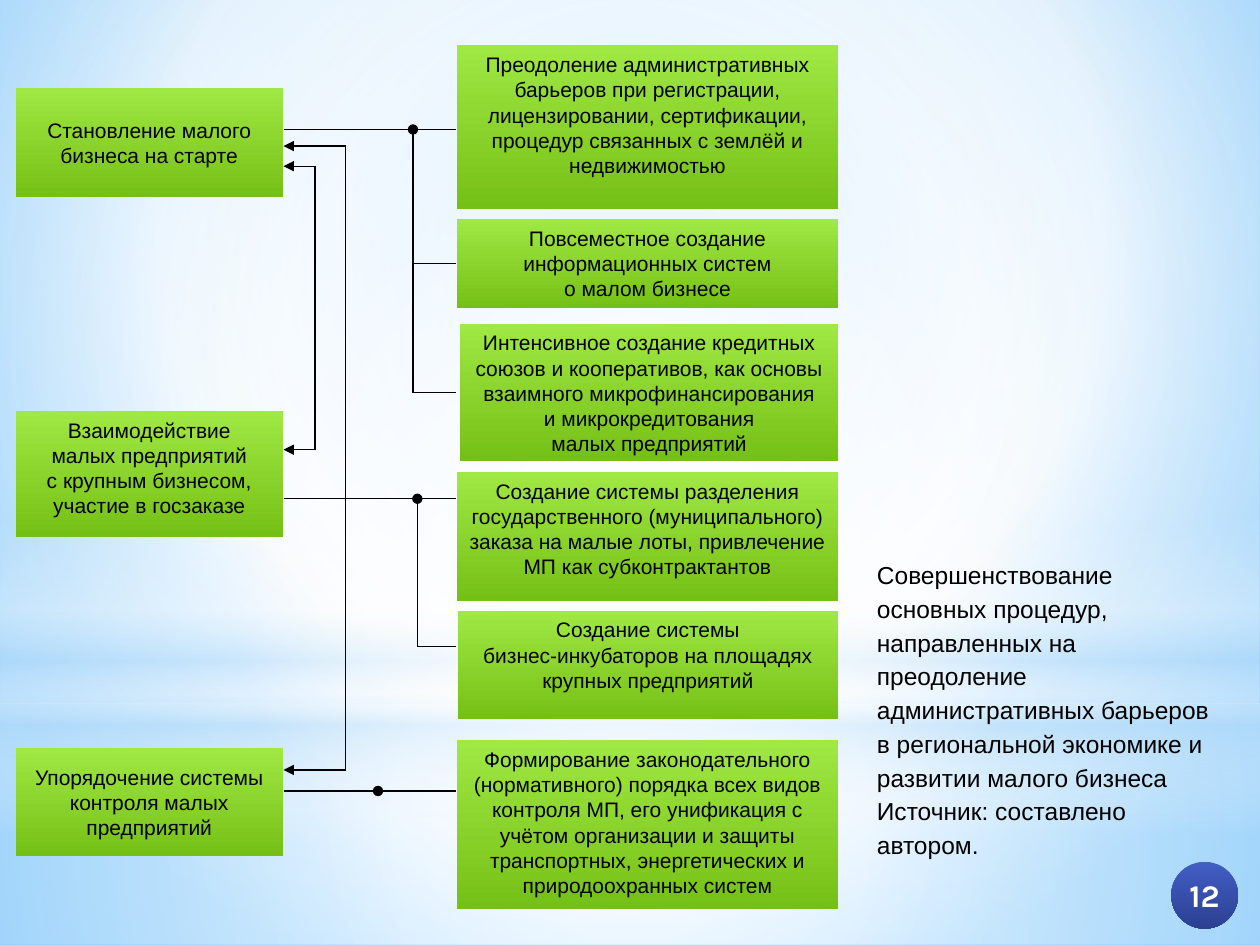
from pptx import Presentation
from pptx.dml.color import RGBColor
from pptx.enum import shapes, text
from pptx.oxml.ns import qn
from pptx.util import Pt
from lxml import etree

GREEN = [(0, "A0E844", 100), (100, "75C016", 100)]
BLUE = [(0, "435EC5", 100), (100, "2B4092", 100)]
MID = (50, 50, 50, 50)
SHAPE = shapes.MSO_SHAPE
TOP, CENTER = text.MSO_ANCHOR.TOP, text.MSO_ANCHOR.MIDDLE


def tint(code):
    """Return the colour of a hex string."""
    return RGBColor.from_string(code)


def node(root, name, **attrs):
    """Add a drawing element with the given attributes."""
    return etree.SubElement(root, qn("a:" + name), {k: str(v) for k, v in attrs.items()})


def blend(owner, fill, stops, focus=None):
    """Give a fill a gradient, downward or round a focus."""
    fill.gradient()
    grad = owner.xpath(".//a:gradFill")[0]
    grad.clear()
    grad.set("rotWithShape", "1")
    row = node(grad, "gsLst")
    for pos, code, alpha in stops:
        color = node(node(row, "gs", pos=pos * 1000), "srgbClr", val=code)
        if alpha < 100:
            node(color, "alpha", val=alpha * 1000)
    if focus:
        sides = {k: v * 1000 for k, v in zip("ltrb", focus)}
        node(node(grad, "path", path="circle"), "fillToRect", **sides)
    else:
        node(grad, "lin", ang=5400000, scaled=0)


def panel(slide, kind, box, stops, focus=None):
    """Draw a borderless gradient shape."""
    form = slide.shapes.add_shape(kind, *map(Pt, box))
    form.shadow.inherit = False
    form.line.fill.background()
    blend(form.element, form.fill, stops, focus)
    return form


def write(frame, lines, size, name="Arial", code="000000", align=text.PP_ALIGN.CENTER):
    """Fill a frame with one paragraph for each line."""
    frame.word_wrap = True
    frame.text = "\n".join(lines)
    for par in frame.paragraphs:
        par.alignment = align
        par.font.size, par.font.name = Pt(size), name
        par.font.color.rgb = tint(code)


def card(slide, box, lines, anchor=TOP):
    """Draw a green card with centred text."""
    form = panel(slide, SHAPE.RECTANGLE, box, GREEN)
    write(form.text_frame, lines, 12)
    form.text_frame.vertical_anchor = anchor


def line(slide, x1, y1, x2, y2, tip=None):
    """Draw a thin black line with an optional end mark."""
    link = slide.shapes.add_connector(shapes.MSO_CONNECTOR.STRAIGHT, *map(Pt, (x1, y1, x2, y2)))
    link.line.color.rgb = tint("000000")
    link.line.width = Pt(0.75)
    if tip:
        node(link.line._get_or_add_ln(), "tailEnd", type=tip)
    node(link.element.spPr, "effectLst")


def branch(slide, box, knot, drops=()):
    """Draw a line with a dot and side lines at the given depths."""
    left, top, width, _ = box
    mid, right = left + knot, left + width
    line(slide, left, top, mid, top, "oval")
    line(slide, mid, top, right, top)
    if drops:
        line(slide, mid, top, mid, top + drops[-1])
    for drop in drops:
        line(slide, mid, top + drop, right, top + drop)


def loop(slide, box):
    """Draw a bracket with arrows at both left ends."""
    left, top, width, height = box
    right, low = left + width, top + height
    line(slide, right, top, left, top, "triangle")
    line(slide, right, top, right, low)
    line(slide, right, low, left, low, "triangle")


def scene(slide, box):
    """Draw the sky backdrop over the whole slide."""
    left, top, width, height = box
    base = [(0, "9ED5FF", 100), (60, "FFFFFF", 100), (100, "5BB9FF", 100)]
    blend(slide.element, slide.background.fill, base, (20, 10, 20, 60))
    edge = 401.8
    rect = SHAPE.RECTANGLE
    panel(slide, rect, (left, top + edge, width, height - edge),
          [(0, "FFFFFF", 91), (37, "FFFFFF", 76), (100, "B4DCFA", 79)], MID)
    panel(slide, rect, (left, top, width, edge),
          [(0, "FFFFFF", 89), (48, "FFFFFF", 62), (100, "B4DCFA", 79)], MID)
    panel(slide, rect, (left, top + 296.6, width, 180),
          [(0, "FFFFFF", 0), (29, "FFFFFF", 30), (45, "B4DCFA", 40),
           (55, "FFFFFF", 26), (65, "B4DCFA", 60), (100, "FFFFFF", 0)])
    panel(slide, SHAPE.OVAL, (left, top + 126, width, edge),
          [(0, "FFFFFF", 100), (56, "FFFFFF", 0)], MID)


def stages(slide, box):
    """Draw the column of stages."""
    left, top, width, _ = box
    rows = [
        (0, 62.5, CENTER, ["Становление малого бизнеса на старте"]),
        (184.5, 72, TOP, ["Взаимодействие", "малых предприятий",
                          "с крупным бизнесом,", "участие в госзаказе"]),
        (377.3, 61.5, CENTER, ["Упорядочение системы контроля малых предприятий"]),
    ]
    for drop, height, anchor, lines in rows:
        card(slide, (left, top + drop, width, height), lines, anchor)


def steps(slide, box):
    """Draw the column of measures."""
    left, top, width, _ = box
    rows = [
        (0, 0, 93.6, ["Преодоление административных барьеров при регистрации, "
                      "лицензировании, сертификации,",
                      "процедур связанных с землёй и", "недвижимостью"]),
        (0, 99.2, 51, ["Повсеместное создание информационных систем", "о малом бизнесе"]),
        (2, 159, 78.5, ["Интенсивное создание кредитных союзов и кооперативов, "
                        "как основы взаимного микрофинансирования",
                        "и микрокредитования", "малых предприятий"]),
        (0, 243.8, 73.5, ["Создание системы разделения государственного (муниципального) "
                          "заказа на малые лоты, привлечение МП как субконтрактантов"]),
        (0.5, 323, 62, ["Создание системы", "бизнес-инкубаторов на площадях",
                        "крупных предприятий"]),
        (0, 397, 96.5, ["Формирование законодательного (нормативного) порядка всех видов "
                        "контроля МП, его унификация с", "учётом организации и защиты",
                        "транспортных, энергетических и", "природоохранных систем"]),
    ]
    for inset, drop, height, lines in rows:
        card(slide, (left + inset, top + drop, width - inset, height), lines)


def links(slide, box):
    """Join the stages with their measures and each other."""
    left, top, width, _ = box
    branch(slide, (left, top, width, 150.5), 74, (76.5, 150.5))
    branch(slide, (left, top + 211, width, 84.5), 76.5, (84.5,))
    branch(slide, (left, top + 378, width, 0), 54)
    loop(slide, (left, top + 21, 18, 162))
    loop(slide, (left, top + 9.5, 35.5, 356.5))


def note(slide, box):
    """Write the caption at the right."""
    frame = slide.shapes.add_textbox(*map(Pt, box)).text_frame
    write(frame, ["Совершенствование основных процедур, направленных на преодоление "
                  "административных барьеров в региональной экономике и развитии малого "
                  "бизнеса Источник: составлено автором."], 14, align=text.PP_ALIGN.LEFT)
    frame.paragraphs[0].line_spacing = 1.15


def badge(slide, box):
    """Draw the round page number."""
    frame = panel(slide, SHAPE.OVAL, box, BLUE).text_frame
    write(frame, ["12"], 18, "Karla", "FFFFFF")
    frame.word_wrap = False
    frame.vertical_anchor = CENTER
    frame.paragraphs[0].font.bold = True


def main():
    """Build and save the slide."""
    deck = Presentation()
    deck.slide_width, deck.slide_height = Pt(720), Pt(540)
    slide = deck.slides.add_slide(deck.slide_layouts[6])
    scene(slide, (0, 0, 720, 540))
    steps(slide, (261, 26, 218, 493.5))
    stages(slide, (9, 50.3, 152.6, 438.8))
    links(slide, (162, 74, 98.5, 378))
    note(slide, (494, 314, 212.5, 183))
    badge(slide, (669.3, 492.5, 38.2, 38.2))
    deck.save("out.pptx")


if __name__ == "__main__":
    main()
